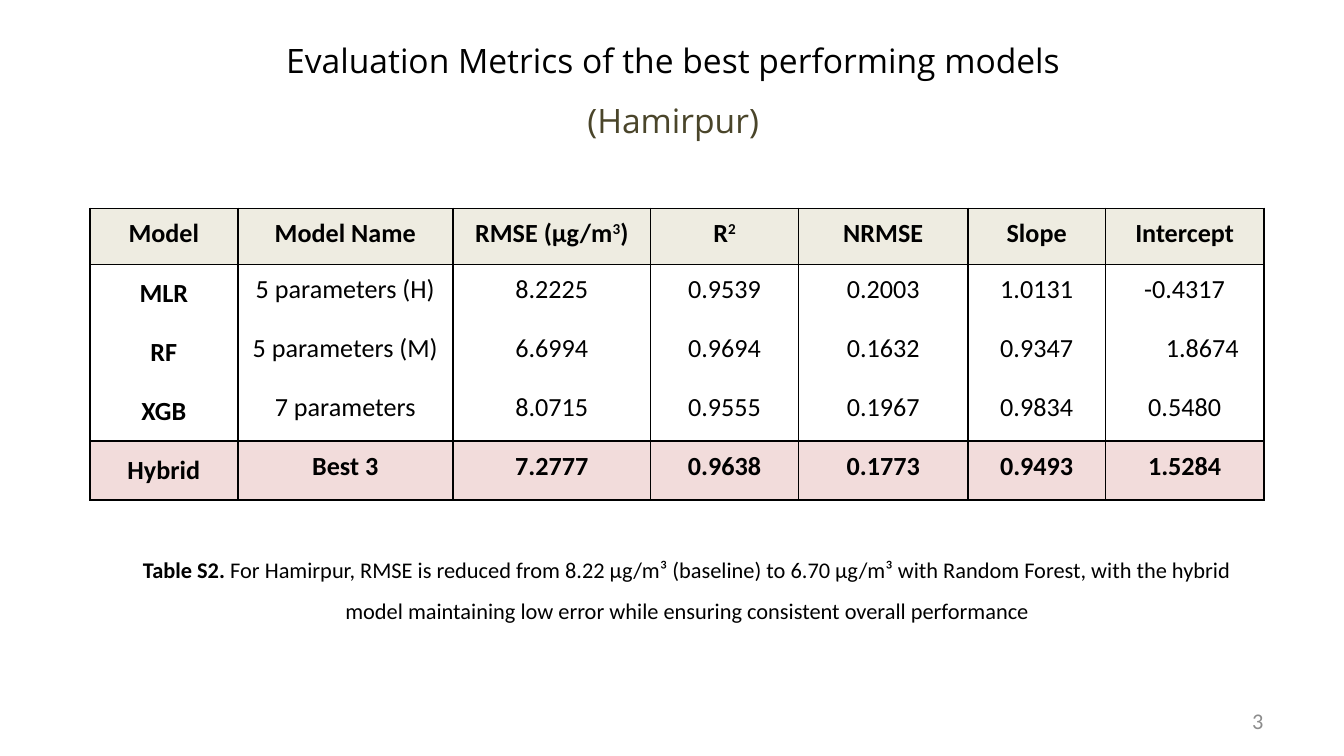
"""Build a slide with a table of evaluation metrics for four models."""
from pptx import Presentation
from pptx.dml.color import RGBColor
from pptx.enum import text as t
from pptx.oxml import parse_xml
from pptx.oxml.ns import nsdecls
from pptx.util import Pt

TITLE = [("Evaluation Metrics of the best performing models\v", "000000"),
         ("(Hamirpur)", "4A452A")]
ROWS = [
    ["Model", "Model Name", "RMSE (µg/m^3^)", "R^2", "NRMSE", "Slope", "Intercept"],
    ["MLR", "5 parameters (H)", "8.2225", "0.9539", "0.2003", "1.0131", "-0.4317"],
    ["RF", "5 parameters (M)", "6.6994", "0.9694", "0.1632", "0.9347", "1.8674"],
    ["XGB", "7 parameters", "8.0715", "0.9555", "0.1967", "0.9834", "0.5480"],
    ["Hybrid", "Best 3", "7.2777", "0.9638", "0.1773", "0.9493", "1.5284"],
]
WIDTHS = [79.2, 115.2, 106, 79.2, 90.8, 73.6, 85]
FILLS = {0: "EEECE1", 4: "F2DCDB"}
RULES = {0, 1, 4, 5}
SHIFT = {(2, 6): 19}
NOTE = [("Table S2. ", True),
        ("For Hamirpur, RMSE is reduced from 8.22 µg/m³ (baseline) to 6.70 µg/m³ "
         "with Random Forest, with the hybrid model maintaining low error while "
         "ensuring consistent overall performance", False)]
MID = t.PP_ALIGN.CENTER


def tint(code):
    return RGBColor.from_string(code)


def style(font, size, color="000000", bold=False, face="Calibri"):
    font.size, font.bold, font.name = Pt(size), bold, face
    font.color.rgb = tint(color)


def add_box(slide, spot, align, gap=None, anchor=t.MSO_ANCHOR.MIDDLE):
    frame = slide.shapes.add_textbox(*map(Pt, spot)).text_frame
    frame.word_wrap = True
    frame.vertical_anchor = anchor
    para = frame.paragraphs[0]
    para.alignment = align
    if gap:
        para.line_spacing = gap
    return para


def add_edge(cell, side, shown):
    paint = '<a:srgbClr val="000000"/>'
    fill = f"<a:solidFill>{paint}</a:solidFill>" if shown else "<a:noFill/>"
    cell._tc.get_or_add_tcPr().append(parse_xml(
        f'<a:ln{side} {nsdecls("a")} w="12700">{fill}</a:ln{side}>'))


def fill_cell(cell, row, col, words):
    side = 7.2 if row and not col else 5
    cell.margin_top = cell.margin_bottom = cell.margin_right = Pt(side)
    cell.margin_left = Pt(side + SHIFT.get((row, col), 0))
    for edge, shown in (("L", True), ("R", True),
                        ("T", row in RULES), ("B", row + 1 in RULES)):
        add_edge(cell, edge, shown)
    if row in FILLS:
        cell.fill.solid()
        cell.fill.fore_color.rgb = tint(FILLS[row])
    else:
        cell.fill.background()
    para = cell.text_frame.paragraphs[0]
    para.alignment = MID
    for i, part in enumerate(words.split("^")):
        if part:
            run = para.add_run()
            run.text = part
            style(run.font, 14, bold=row in FILLS or col == 0)
            if i == 1:
                run.font._element.set("baseline", "30000")


def add_grid(slide):
    grid = slide.shapes.add_table(len(ROWS), len(WIDTHS), Pt(48.2), Pt(111.6),
                                  Pt(sum(WIDTHS)), Pt(30.2 * len(ROWS))).table
    for col, width in zip(grid.columns, WIDTHS):
        col.width = Pt(width)
    for r, row in enumerate(ROWS):
        grid.rows[r].height = Pt(30.2 if r == 0 else 31.5)
        for c, words in enumerate(row):
            fill_cell(grid.cell(r, c), r, c, words)


def main():
    deck = Presentation()
    deck.slide_width, deck.slide_height = Pt(720), Pt(405)
    slide = deck.slides.add_slide(deck.slide_layouts[6])

    title = add_box(slide, (36.7, 17.3, 648, 51), MID, 1.5)
    title.text = "".join(words for words, _ in TITLE)
    for run, (_, color) in zip(title.runs, TITLE):
        style(run.font, 18, color, face="Open Sans")

    page = add_box(slide, (516, 375, 168, 21.6), t.PP_ALIGN.RIGHT)
    page.text = "3"
    style(page.runs[0].font, 12, "8C8C8C")

    add_grid(slide)

    note = add_box(slide, (64.8, 287.3, 607, 49), MID, 1.5, t.MSO_ANCHOR.TOP)
    for words, bold in NOTE:
        run = note.add_run()
        run.text = words
        style(run.font, 12, bold=bold)
    deck.save("out.pptx")


if __name__ == "__main__":
    main()
